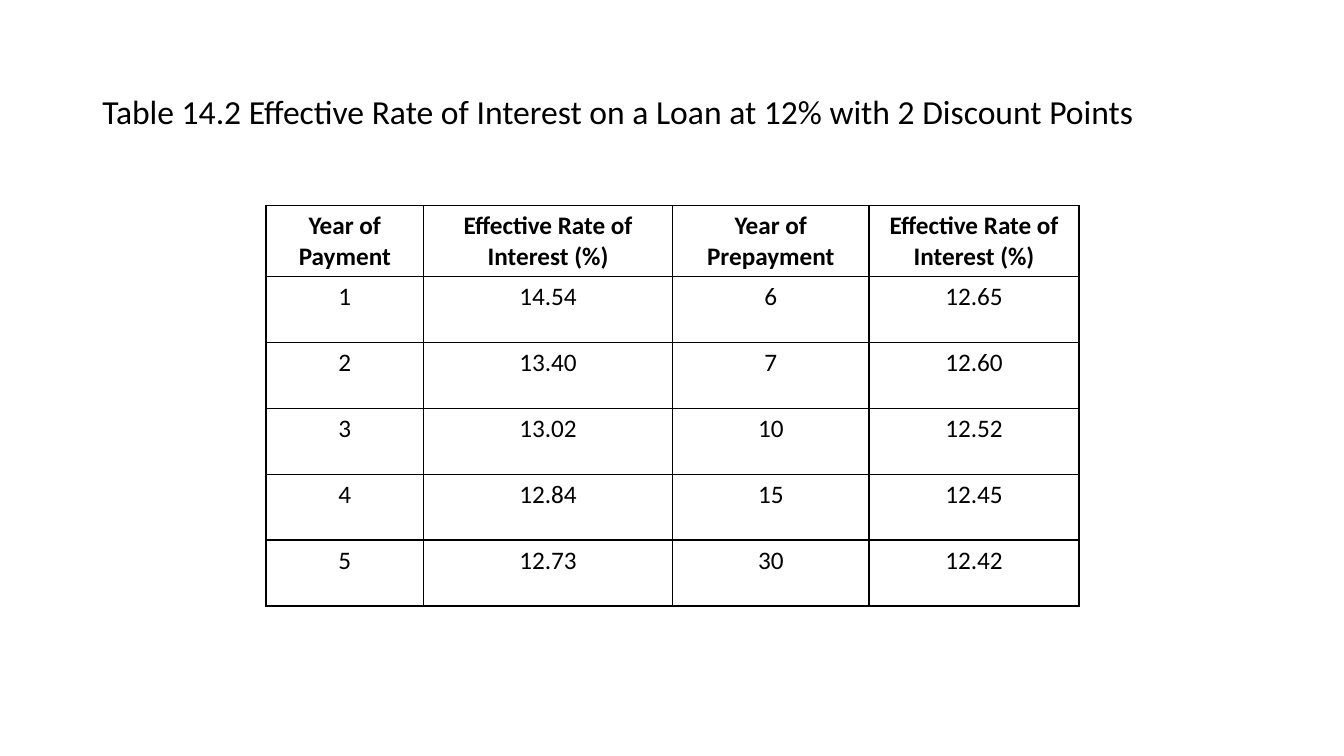
from lxml import etree
from pptx import Presentation
from pptx import util as u
from pptx.dml import color
from pptx.enum import text
from pptx.oxml import ns

FONT = "Calibri"
BLACK = "000000"


def add_run(paragraph, words, size, bold=False):
    run = paragraph.add_run()
    run.text = words
    run.font.name = FONT
    run.font.size = u.Pt(size)
    run.font.bold = bold
    run.font.color.rgb = color.RGBColor.from_string(BLACK)


def add_borders(cell, width):
    """Draw a solid line on all four sides of a table cell."""
    properties = cell._tc.get_or_add_tcPr()
    for position, side in enumerate(("lnL", "lnR", "lnT", "lnB")):
        line = etree.Element(ns.qn(f"a:{side}"), w=str(u.Pt(width)))
        fill = etree.SubElement(line, ns.qn("a:solidFill"))
        etree.SubElement(fill, ns.qn("a:srgbClr"), val=BLACK)
        properties.insert(position, line)


presentation = Presentation()
presentation.slide_width = u.Pt(960)
presentation.slide_height = u.Pt(540)
slide = presentation.slides.add_slide(presentation.slide_layouts[6])

# Title
title = slide.shapes.add_textbox(u.Pt(66), u.Pt(28.75), u.Pt(828), u.Pt(104.4)).text_frame
title.word_wrap = True
title.vertical_anchor = text.MSO_ANCHOR.MIDDLE
title.paragraphs[0].line_spacing = 0.9
add_run(title.paragraphs[0],
        "Table 14.2 Effective Rate of Interest on a Loan at 12% with 2 Discount Points", 24)

# Table of effective rates
rates = [
    ("Year of Payment", "Effective Rate of Interest (%)",
     "Year of Prepayment", "Effective Rate of Interest (%)"),
    ("1", "14.54", "6", "12.65"),
    ("2", "13.40", "7", "12.60"),
    ("3", "13.02", "10", "12.52"),
    ("4", "12.84", "15", "12.45"),
    ("5", "12.73", "30", "12.42"),
]
column_widths = [112.6, 177.8, 140.4, 150]
row_height = 47.1

table = slide.shapes.add_table(
    len(rates), len(column_widths), u.Pt(190), u.Pt(147),
    u.Pt(sum(column_widths)), u.Pt(row_height * len(rates))).table
table.horz_banding = False
for column, width in zip(table.columns, column_widths):
    column.width = u.Pt(width)

for row_number, row in enumerate(rates):
    table.rows[row_number].height = u.Pt(row_height)
    for column_number, words in enumerate(row):
        cell = table.cell(row_number, column_number)
        cell.fill.background()
        add_borders(cell, 1)
        paragraph = cell.text_frame.paragraphs[0]
        paragraph.alignment = text.PP_ALIGN.CENTER
        add_run(paragraph, words, 18, bold=row_number == 0)

presentation.save("out.pptx")
